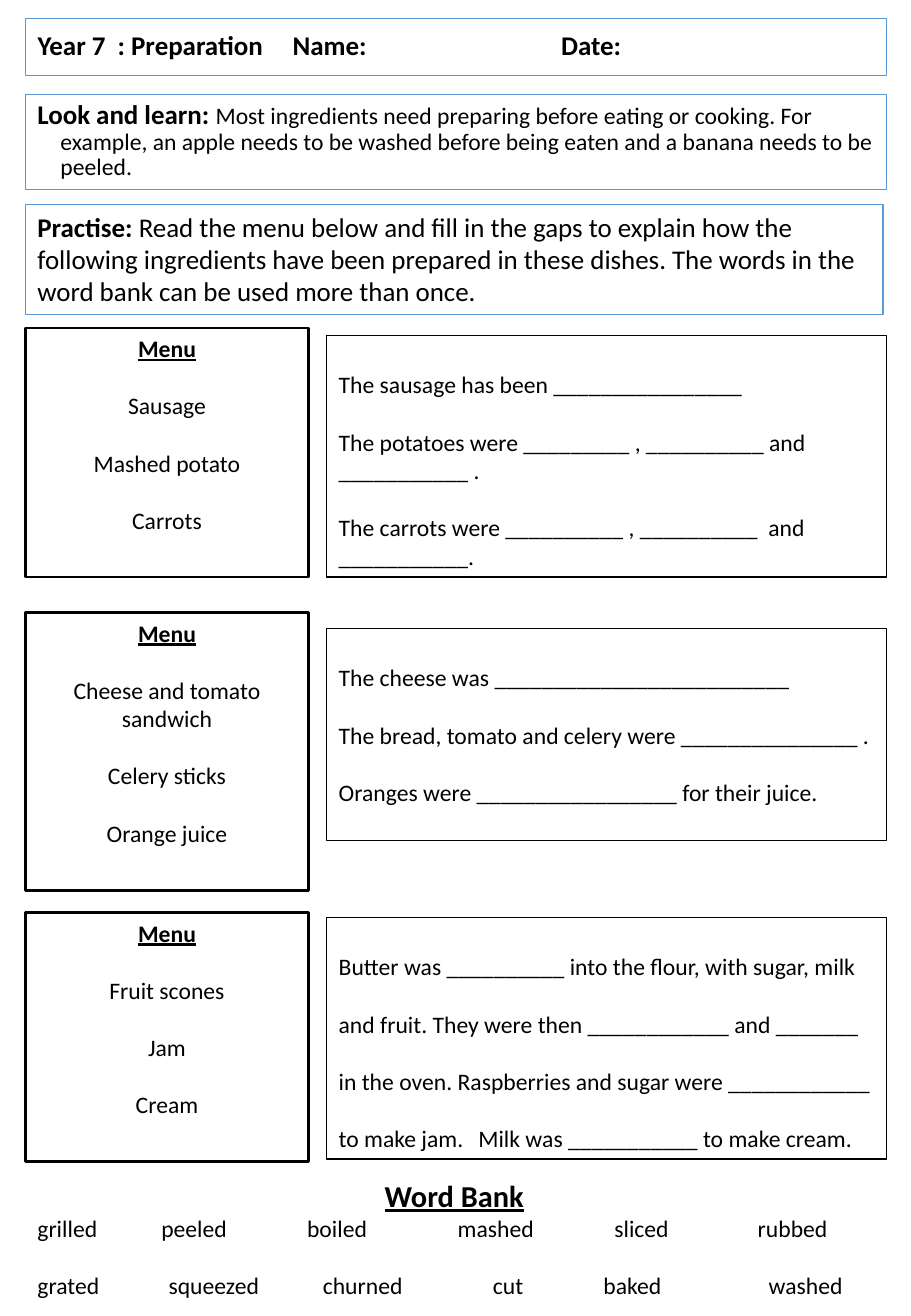
import pptx
import pptx.dml.color
import pptx.enum.text
import pptx.oxml
import pptx.oxml.ns
import pptx.util

COLOURS = {"ink": "000000", "frame": "5B9BD5", "paper": "FFFFFF"}
FONT = "Calibri"
BLANK_LINE = 17.1  # height of one 14 pt line, in points
ALIGN = pptx.enum.text.PP_ALIGN


def colour(name):
    return pptx.dml.color.RGBColor.from_string(COLOURS[name])


def add_run(paragraph, text, size=14, bold=False, underline=False):
    run = paragraph.add_run()
    run.text = text
    font = run.font
    font.name, font.size = FONT, pptx.util.Pt(size)
    font.bold, font.underline = bold, underline
    font.color.rgb = colour("ink")


def format_paragraph(paragraph, align=ALIGN.LEFT, spacing=1.0, before=0, hanging=0, tabs=()):
    paragraph.alignment = align
    paragraph.line_spacing = spacing
    paragraph.space_before = pptx.util.Pt(before)
    properties = paragraph._p.get_or_add_pPr()
    if hanging:
        indent = pptx.util.Inches(hanging)
        properties.set("marL", str(indent))
        properties.set("indent", str(-indent))
    if tabs:
        tab_list = pptx.oxml.parse_xml("<a:tabLst %s/>" % pptx.oxml.ns.nsdecls("a"))
        for position in tabs:
            tab = tab_list.makeelement(pptx.oxml.ns.qn("a:tab"))
            tab.set("pos", str(pptx.util.Inches(position)))
            tab.set("algn", "l")
            tab_list.append(tab)
        properties.append(tab_list)


class Worksheet:
    """Places elements by percentages of the slide's width and height."""

    def __init__(self, presentation):
        self.width, self.height = presentation.slide_width, presentation.slide_height
        self.slide = presentation.slides.add_slide(presentation.slide_layouts[5])

    def area(self, left, top, width, height):
        return (int(self.width * left / 100), int(self.height * top / 100),
                int(self.width * width / 100), int(self.height * height / 100))

    def prepare(self, shape, line, line_width, top_lines=0):
        frame = shape.text_frame
        frame.word_wrap = True
        frame.auto_size = pptx.enum.text.MSO_AUTO_SIZE.NONE
        frame.vertical_anchor = pptx.enum.text.MSO_ANCHOR.TOP
        frame.margin_left = frame.margin_right = pptx.util.Inches(0.1)
        frame.margin_bottom = pptx.util.Inches(0.05)
        frame.margin_top = pptx.util.Inches(0.05) + pptx.util.Pt(BLANK_LINE * top_lines)
        if line:
            shape.line.color.rgb = colour(line)
            shape.line.width = pptx.util.Pt(line_width)
        return frame

    def title(self, text, area, tabs):
        shape = self.slide.shapes.title
        shape.left, shape.top, shape.width, shape.height = self.area(*area)
        frame = self.prepare(shape, "frame", 0.75)
        frame.vertical_anchor = pptx.enum.text.MSO_ANCHOR.MIDDLE
        format_paragraph(frame.paragraphs[0], spacing=0.9, tabs=tabs)
        add_run(frame.paragraphs[0], text, size=16, bold=True)

    def box(self, area, line=None, line_width=0.75, top_lines=0):
        shape = self.slide.shapes.add_textbox(*self.area(*area))
        return self.prepare(shape, line, line_width, top_lines)

    def instruction(self, heading, text, area, size, **layout):
        paragraph = self.box(area, "frame").paragraphs[0]
        format_paragraph(paragraph, **layout)
        add_run(paragraph, heading, size=16, bold=True)
        add_run(paragraph, text, size=size)

    def menu(self, dishes, top, height):
        frame = self.box((2.8, top, 31.07, height), "ink", 1.5)
        format_paragraph(frame.paragraphs[0], align=ALIGN.CENTER)
        add_run(frame.paragraphs[0], "Menu", bold=True, underline=True)
        for dish in dishes:
            paragraph = frame.add_paragraph()
            format_paragraph(paragraph, align=ALIGN.CENTER, before=BLANK_LINE)
            add_run(paragraph, dish)

    def gaps(self, sentences, top, height):
        frame = self.box((35.87, top, 61.47, height), "ink", top_lines=1)
        for index, sentence in enumerate(sentences):
            paragraph = frame.add_paragraph() if index else frame.paragraphs[0]
            format_paragraph(paragraph, before=BLANK_LINE if index else 0,
                             tabs=(1.15,) if "\t" in sentence else ())
            add_run(paragraph, sentence)

    def word_bank(self, rows, area):
        frame = self.box(area)
        format_paragraph(frame.paragraphs[0], align=ALIGN.CENTER)
        add_run(frame.paragraphs[0], "Word Bank", size=18, bold=True, underline=True)
        for index, (words, tabs) in enumerate(rows):
            paragraph = frame.add_paragraph()
            format_paragraph(paragraph, before=BLANK_LINE * index, tabs=tabs)
            add_run(paragraph, "\t".join(words))


# Dishes, menu top and height, sentences, sentence box top and height
EXERCISES = [
    (["Sausage", "Mashed potato", "Carrots"], 24.93, 18.93,
     ["The sausage has been ________________",
      "The potatoes were _________ , __________ and ___________ .",
      "The carrots were __________ , __________  and ___________."], 25.48, 18.37),
    (["Cheese and tomato sandwich", "Celery sticks", "Orange juice"], 46.54, 21.14,
     ["The cheese was _________________________",
      "The bread, tomato and celery were _______________ .",
      "Oranges were _________________ for their juice."], 47.74, 16.16),
    (["Fruit scones", "Jam", "Cream"], 69.34, 18.93,
     ["Butter was __________ into the flour, with sugar, milk",
      "and fruit. They were then ____________ and _______",
      "in the oven. Raspberries and sugar were ____________",
      "to make jam.\tMilk was ___________ to make cream."], 69.71, 18.37),
]
WORD_ROWS = [
    (["grilled", "peeled", "boiled", "mashed", "sliced", "rubbed"],
     (1.02, 2.22, 3.46, 4.75, 5.93)),
    (["grated", "squeezed", "churned", "cut", "baked", "washed"],
     (1.08, 2.35, 3.75, 4.66, 6.02)),
]


def main():
    presentation = pptx.Presentation()
    presentation.slide_width = pptx.util.Inches(7.5)
    presentation.slide_height = pptx.util.Inches(10.83)
    sheet = Worksheet(presentation)
    background = sheet.slide.background.fill
    background.solid()
    background.fore_color.rgb = colour("paper")

    # Heading and instructions
    sheet.title("Year 7  : Preparation\tName:\tDate:", (2.8, 1.39, 94.53, 4.34), (2.1, 4.31))
    sheet.instruction(
        "Look and learn: ",
        "Most ingredients need preparing before eating or cooking. For example, an apple "
        "needs to be washed before being eaten and a banana needs to be peeled.",
        (2.8, 7.2, 94.53, 7.2), size=14, spacing=0.9, hanging=0.19)
    sheet.instruction(
        "Practise: ",
        "Read the menu below and fill in the gaps to explain how the following ingredients "
        "have been prepared in these dishes. The words in the word bank can be used more "
        "than once.",
        (2.8, 15.51, 94.13, 8.4), size=16)

    # Menus with their gap sentences
    for dishes, menu_top, menu_height, sentences, gaps_top, gaps_height in EXERCISES:
        sheet.menu(dishes, menu_top, menu_height)
        sheet.gaps(sentences, gaps_top, gaps_height)

    # Word bank
    sheet.word_bank(WORD_ROWS, (2.8, 89.01, 94.13, 10.25))
    presentation.save("out.pptx")


if __name__ == "__main__":
    main()
